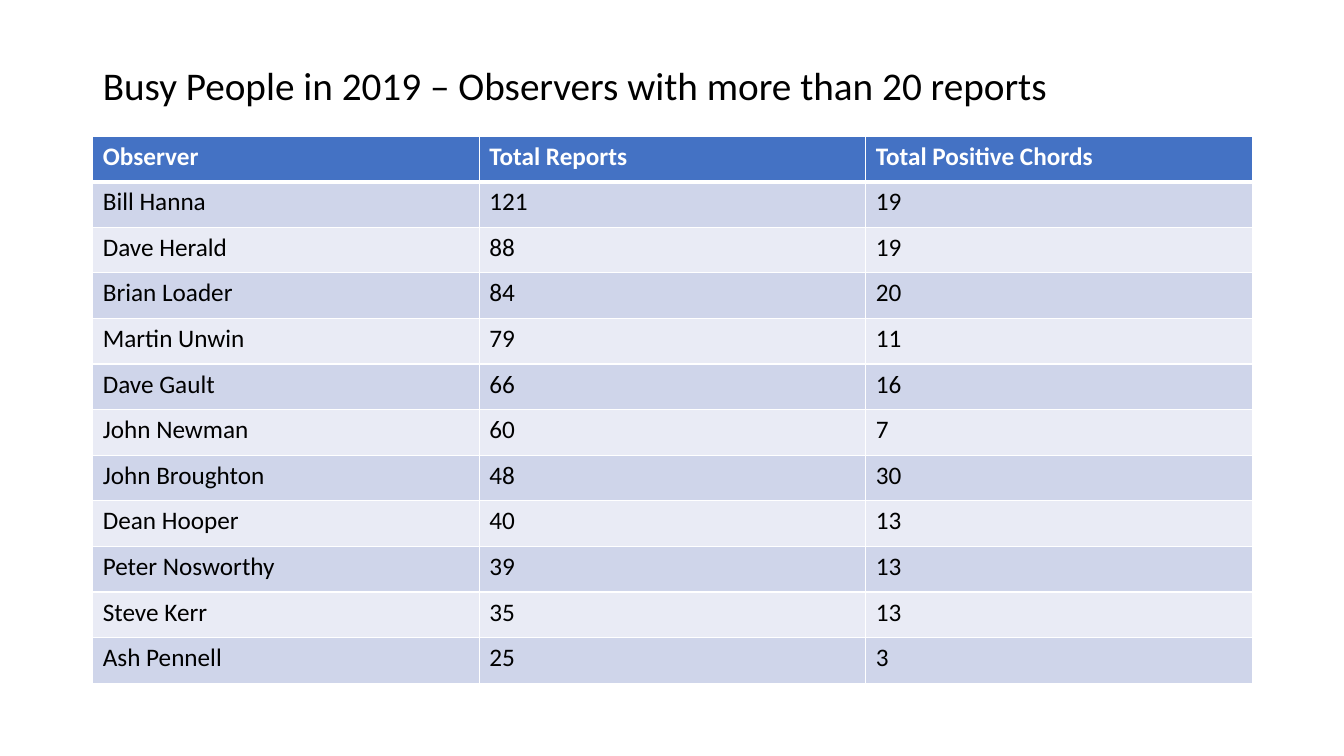
"""Build the slide listing observers with more than 20 reports in 2019."""
from typing import NamedTuple

from lxml import etree
from pptx import Presentation
from pptx import util as u
from pptx.dml.color import RGBColor
from pptx.enum import text
from pptx.oxml import ns
from pptx.slide import Slide
from pptx.table import _Cell

FONT = "Calibri"
BLACK = RGBColor(0x00, 0x00, 0x00)
WHITE = RGBColor(0xFF, 0xFF, 0xFF)
HEADER_BLUE = RGBColor(0x44, 0x72, 0xC4)
BANDS = (RGBColor(0xCF, 0xD5, 0xEA), RGBColor(0xE9, 0xEB, 0xF5))
LEFT, WIDTH = u.Inches(0.92), u.Inches(11.5)


class Observer(NamedTuple):
    name: str
    reports: int
    positive_chords: int


HEADINGS = ("Observer", "Total Reports", "Total Positive Chords")
OBSERVERS = (
    Observer("Bill Hanna", 121, 19),
    Observer("Dave Herald", 88, 19),
    Observer("Brian Loader", 84, 20),
    Observer("Martin Unwin", 79, 11),
    Observer("Dave Gault", 66, 16),
    Observer("John Newman", 60, 7),
    Observer("John Broughton", 48, 30),
    Observer("Dean Hooper", 40, 13),
    Observer("Peter Nosworthy", 39, 13),
    Observer("Steve Kerr", 35, 13),
    Observer("Ash Pennell", 25, 3),
)


def add_title(page: Slide, wording: str) -> None:
    title = page.shapes.title
    title.left, title.top = LEFT, u.Inches(0.4)
    title.width, title.height = WIDTH, u.Inches(0.95)
    frame = title.text_frame
    frame.text = wording
    frame.word_wrap = True
    frame.vertical_anchor = text.MSO_ANCHOR.MIDDLE
    para = frame.paragraphs[0]
    para.alignment = text.PP_ALIGN.LEFT
    para.line_spacing = 0.9
    para.font.name, para.font.size = FONT, u.Pt(28)
    para.font.color.rgb = BLACK


def set_borders(cell: _Cell, top: float, bottom: float) -> None:
    properties = cell._tc.get_or_add_tcPr()
    for side, points in (("L", 1), ("R", 1), ("T", top), ("B", bottom)):
        line = etree.SubElement(properties, ns.qn(f"a:ln{side}"), w=str(u.Pt(points)))
        fill = etree.SubElement(line, ns.qn("a:solidFill"))
        etree.SubElement(fill, ns.qn("a:srgbClr"), val=str(WHITE))


def fill_cell(cell: _Cell, wording: str, row: int) -> None:
    is_header = row == 0
    set_borders(cell, top=3 if row == 1 else 1, bottom=3 if is_header else 1)
    cell.fill.solid()
    cell.fill.fore_color.rgb = HEADER_BLUE if is_header else BANDS[(row - 1) % 2]
    cell.text = wording
    font = cell.text_frame.paragraphs[0].font
    font.name, font.size, font.bold = FONT, u.Pt(18), is_header
    font.color.rgb = WHITE if is_header else BLACK


def add_observer_table(page: Slide) -> None:
    rows = (HEADINGS, *OBSERVERS)
    table = page.shapes.add_table(
        len(rows), len(HEADINGS), LEFT, u.Inches(1.35), WIDTH, u.Inches(5.43)
    ).table
    for row, values in enumerate(rows):
        for column, value in enumerate(values):
            fill_cell(table.cell(row, column), str(value), row)


def main() -> None:
    deck = Presentation()
    deck.slide_width, deck.slide_height = u.Inches(13.33), u.Inches(7.5)
    page = deck.slides.add_slide(deck.slide_layouts.get_by_name("Title Only"))
    add_title(page, "Busy People in 2019 – Observers with more than 20 reports")
    add_observer_table(page)
    deck.save("out.pptx")


if __name__ == "__main__":
    main()
